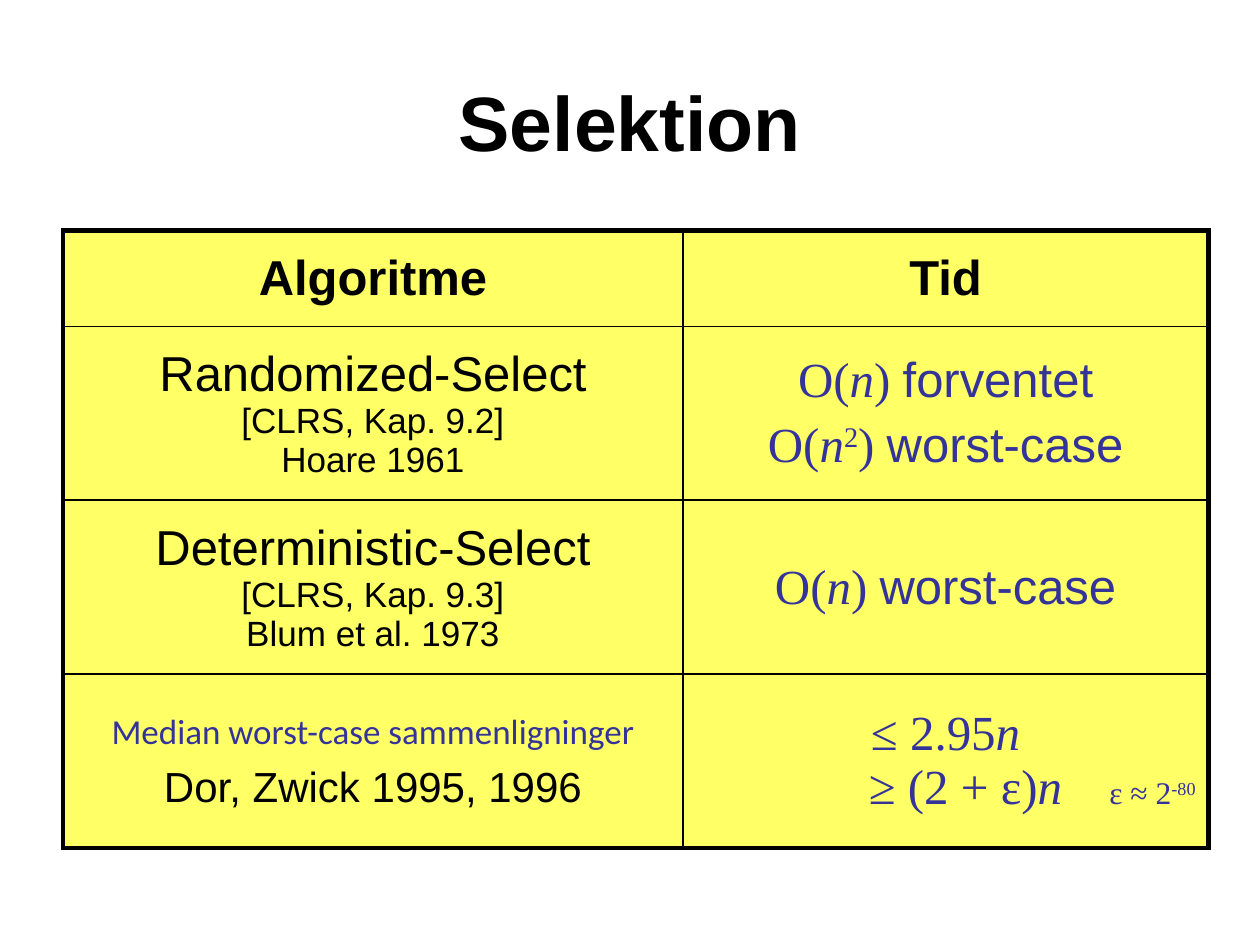
"""Build a slide with a table comparing selection algorithms and their running times."""
from dataclasses import dataclass

from lxml import etree
from pptx import Presentation
from pptx import util as u
from pptx.dml.color import RGBColor
from pptx.enum import text
from pptx.oxml import ns


@dataclass(frozen=True)
class Theme:
    ink: str = "000000"
    blue: str = "333399"
    yellow: str = "FFFF66"
    sans: str = "Arial"
    serif: str = "Times New Roman"
    accent: str = "Calibri"
    title: int = 44
    large: int = 28
    medium: int = 24
    small: int = 20
    note: int = 18
    outer: int = 3
    inner: int = 1


theme = Theme()


def add_span(para, words, size, font, color, bold=False, italic=False, raised=False, gap=0):
    span = para.add_run()
    span.text = words
    span.font.size = u.Pt(size)
    span.font.name = font
    span.font.color.rgb = RGBColor.from_string(color)
    span.font.bold = bold
    span.font.italic = italic
    properties = span._r.get_or_add_rPr()
    if raised:
        properties.set("baseline", "30000")
    if gap:
        properties.set("spc", str(gap * 100))


def add_border(cell, side, width):
    line = etree.SubElement(cell._tc.get_or_add_tcPr(), ns.qn(f"a:{side}"), w=str(u.Pt(width)))
    fill = etree.SubElement(line, ns.qn("a:solidFill"))
    etree.SubElement(fill, ns.qn("a:srgbClr"), val=theme.ink)


center, right = text.PP_ALIGN.CENTER, text.PP_ALIGN.RIGHT
lead = 0.2 * theme.large
heading = (theme.large, theme.sans, theme.ink, True)
name = (theme.large, theme.sans, theme.ink)
source = (theme.small, theme.sans, theme.ink)
math = (theme.large, theme.serif, theme.blue)
variable = (*math, False, True)
exponent = (*math, False, False, True)
case = (theme.large, theme.sans, theme.blue)
note = (theme.note, theme.serif, theme.blue)
linear = [("O(", *math), ("n", *variable), (") ", *math)]
square = [("O(", *math), ("n", *variable), ("2", *exponent), (") ", *math)]

rows = [
    [
        [(center, lead, 0, [("Algoritme", *heading)])],
        [(center, lead, 0, [("Tid", *heading)])],
    ],
    [
        [
            (center, 0, 0, [("Randomized-Select", *name)]),
            (center, 0, 0, [("[CLRS, Kap. 9.2]", *source)]),
            (center, 0, 0, [("Hoare 1961", *source)]),
        ],
        [
            (center, lead, 0, [*linear, ("forventet", *case)]),
            (center, lead, 0, [*square, ("worst-case", *case)]),
        ],
    ],
    [
        [
            (center, 0, 0, [("Deterministic-Select", *name)]),
            (center, 0, 0, [("[CLRS, Kap. 9.3]", *source)]),
            (center, 0, 0, [("Blum et al. 1973", *source)]),
        ],
        [(center, lead, 0, [*linear, ("worst-case", *case)])],
    ],
    [
        [
            (center, 0, 6, [("Median worst-case sammenligninger", theme.small, theme.accent, theme.blue)]),
            (center, 0, 6, [("Dor, Zwick 1995, 1996", theme.medium, theme.sans, theme.ink)]),
        ],
        [
            (center, 0, 0, [("≤ 2.95", *math), ("n", *variable)]),
            (right, 0, 0, [
                ("≥ (2 + ε)", *math),
                ("n ", *variable, False, 10.5),
                ("ε ≈ 2", *note),
                ("-80", *note, False, False, True),
            ]),
        ],
    ],
]
rows[3][1][1][3][1] = ("n ", *variable, False, 10) if isinstance(rows[3][1][1][3], list) else None

deck = Presentation()
deck.slide_width, deck.slide_height = u.Inches(10), u.Inches(7.5)
page = deck.slides.add_slide(deck.slide_layouts[5])

title = page.shapes.title
title.left, title.top = int(deck.slide_width * 0.05), u.Inches(0.33)
title.width, title.height = int(deck.slide_width * 0.9), u.Inches(1.25)
title.text_frame.vertical_anchor = text.MSO_ANCHOR.MIDDLE
para = title.text_frame.paragraphs[0]
para.alignment = center
add_span(para, "Selektion", theme.title, theme.sans, theme.ink, bold=True)

widths = [u.Inches(4.92), u.Inches(4.17)]
heights = [u.Inches(0.76)] + [u.Inches(1.38)] * 3
frame = page.shapes.add_table(
    len(rows), len(widths), title.left, u.Inches(1.83), sum(widths), sum(heights)
)
table = frame.table
table.first_row = table.horz_banding = False
for column, width in zip(table.columns, widths):
    column.width = width
for row, height in zip(table.rows, heights):
    row.height = height

for r, row in enumerate(rows):
    for c, paragraphs in enumerate(row):
        cell = table.cell(r, c)
        cell.vertical_anchor = text.MSO_ANCHOR.MIDDLE
        edges = {
            "lnL": c == 0,
            "lnR": c == len(widths) - 1,
            "lnT": r == 0,
            "lnB": r == len(rows) - 1,
        }
        for side, outside in edges.items():
            add_border(cell, side, theme.outer if outside else theme.inner)
        cell.fill.solid()
        cell.fill.fore_color.rgb = RGBColor.from_string(theme.yellow)
        for index, (alignment, before, after, spans) in enumerate(paragraphs):
            box = cell.text_frame
            para = box.add_paragraph() if index else box.paragraphs[0]
            para.alignment = alignment
            para.space_before, para.space_after = u.Pt(before), u.Pt(after)
            for span in spans:
                add_span(para, *span)

deck.save("out.pptx")
